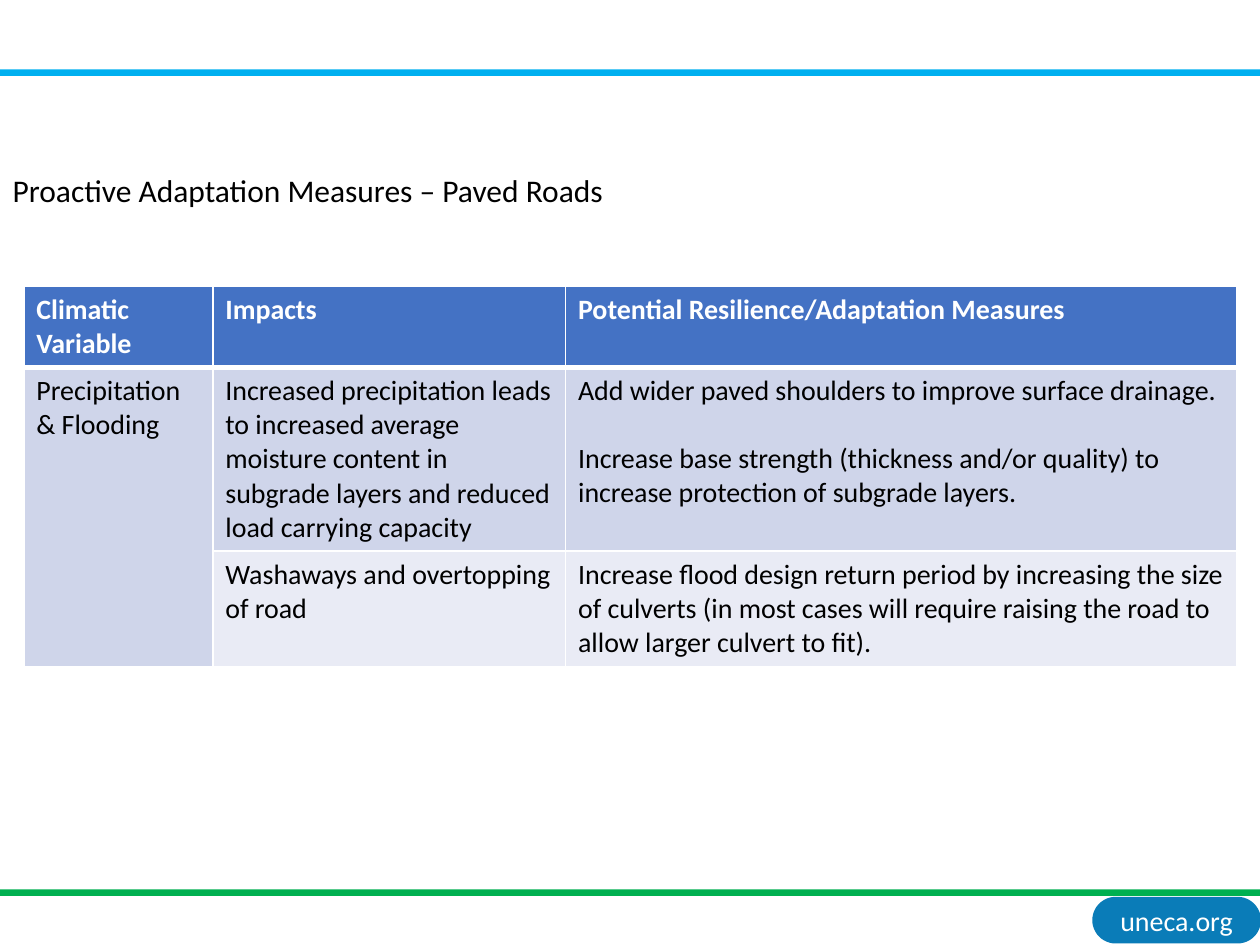
from lxml.etree import SubElement
from pptx import Presentation
from pptx.dml.color import RGBColor
from pptx.enum.shapes import MSO_SHAPE
from pptx.enum.text import MSO_ANCHOR, PP_ALIGN
from pptx.oxml.ns import qn
from pptx.util import Cm, Pt

WHITE, BLACK = "FFFFFF", "000000"
HEADER, BAND_DARK, BAND_LIGHT = "4472C4", "CFD5EA", "E9EBF5"


def color(value):
    return RGBColor.from_string(value)


class SlideBuilder:
    font = "Calibri"
    body_size = 16
    title_size = 18
    line_gap = 19.5

    def __init__(self, slide):
        self.slide = slide

    def add_lines(self, frame, lines, size, ink, bold=False, align=PP_ALIGN.LEFT, gap=0):
        for index, line in enumerate(lines):
            paragraph = frame.add_paragraph() if index else frame.paragraphs[0]
            paragraph.alignment = align
            if index and gap:
                paragraph.space_before = Pt(gap)
            run = paragraph.add_run()
            run.text = line
            run.font.name = self.font
            run.font.size = Pt(size)
            run.font.bold = bold
            run.font.color.rgb = color(ink)

    def title(self, text, left, top, width, height):
        heading = self.slide.shapes.title
        heading.left, heading.top = Cm(left), Cm(top)
        heading.width, heading.height = Cm(width), Cm(height)
        frame = heading.text_frame
        frame.word_wrap = False
        frame.vertical_anchor = MSO_ANCHOR.TOP
        self.add_lines(frame, [text], self.title_size, BLACK)

    def block(self, preset, left, top, width, height, fill):
        block = self.slide.shapes.add_shape(
            preset, Cm(left), Cm(top), Cm(width), Cm(height))
        block.shadow.inherit = False
        block.fill.solid()
        block.fill.fore_color.rgb = color(fill)
        block.line.fill.background()
        return block

    def rule(self, top, fill):
        self.block(MSO_SHAPE.RECTANGLE, 0, top, 25.4, 0.13, fill)

    def badge(self, text, left, top, width, height, fill):
        badge = self.block(MSO_SHAPE.ROUNDED_RECTANGLE, left, top, width, height, fill)
        badge.adjustments[0] = 0.5
        frame = badge.text_frame
        frame.margin_left = frame.margin_right = Cm(0.13)
        frame.margin_top = frame.margin_bottom = Cm(0.13)
        frame.vertical_anchor = MSO_ANCHOR.MIDDLE
        frame.word_wrap = True
        self.add_lines(frame, [text], self.body_size, WHITE, align=PP_ALIGN.CENTER)

    def borders(self, cell, top, bottom):
        properties = cell._tc.get_or_add_tcPr()
        for side, points in (("L", 1), ("R", 1), ("T", top), ("B", bottom)):
            edge = SubElement(properties, qn(f"a:ln{side}"), w=str(Pt(points)))
            fill = SubElement(edge, qn("a:solidFill"))
            SubElement(fill, qn("a:srgbClr"), val=WHITE)

    def table(self, rows, left, top, widths, heights, fills, merges):
        grid = self.slide.shapes.add_table(
            len(heights), len(widths), Cm(left), Cm(top),
            Cm(sum(widths)), Cm(sum(heights))).table
        grid.horz_banding = False
        for column, width in zip(grid.columns, widths):
            column.width = Cm(width)
        for row, height in zip(grid.rows, heights):
            row.height = Cm(height)
        for r, row in enumerate(rows):
            header = r == 0
            for c, (lines, gap) in enumerate(row):
                cell = grid.cell(r, c)
                self.borders(cell, 3 if r == 1 else 1, 3 if header else 1)
                cell.fill.solid()
                cell.fill.fore_color.rgb = color(fills[r])
                self.add_lines(cell.text_frame, lines, self.body_size,
                               WHITE if header else BLACK, bold=header, gap=gap)
        for first, last in merges:
            grid.cell(*first).merge(grid.cell(*last))


def main():
    deck = Presentation()
    deck.slide_width, deck.slide_height = Cm(25.4), Cm(19.05)
    page = SlideBuilder(deck.slides.add_slide(deck.slide_layouts[5]))

    page.badge("uneca.org", 22.02, 18.08, 3.4, 0.94, "0A7CB8")
    page.rule(1.4, "00B0F0")
    page.rule(17.93, "00B050")

    measures = [
        [(["Climatic Variable"], 0), (["Impacts"], 0),
         (["Potential Resilience/Adaptation Measures"], 0)],
        [(["Precipitation", "& Flooding"], 0),
         (["Increased precipitation leads to increased average moisture content "
           "in subgrade layers and reduced load carrying capacity"], 0),
         (["Add wider paved shoulders to improve surface drainage.",
           "Increase base strength (thickness and/or quality) to increase "
           "protection of subgrade layers."], page.line_gap)],
        [([], 0),
         (["Washaways and overtopping of road"], 0),
         (["Increase flood design return period by increasing the size of culverts "
           "(in most cases will require raising the road to allow larger culvert "
           "to fit)."], 0)],
    ]
    page.table(measures, 0.48, 5.77, [3.81, 7.11, 13.54], [1.59, 3.65, 2.29],
               [HEADER, BAND_DARK, BAND_LIGHT], [((1, 0), (2, 0))])
    page.title("Proactive Adaptation Measures – Paved Roads", 0, 3.33, 12.55, 1.02)
    deck.save("out.pptx")


if __name__ == "__main__":
    main()
